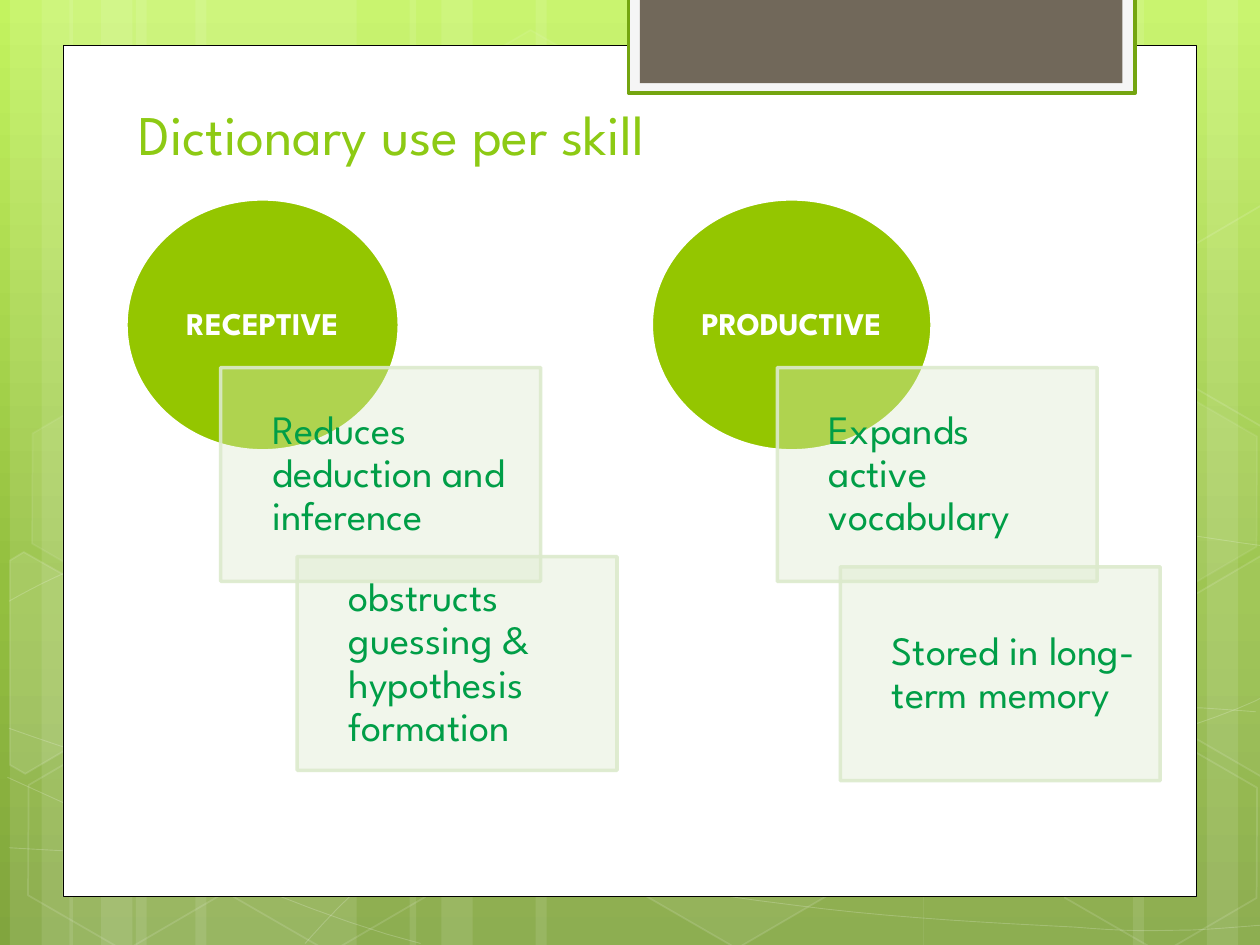
import copy
from dataclasses import dataclass

import pptx
import pptx.dml.color
import pptx.enum.shapes
import pptx.enum.text
import pptx.oxml
import pptx.util
from pptx.util import Cm

SHAPE = pptx.enum.shapes.MSO_SHAPE
ALIGN = pptx.enum.text.PP_ALIGN
ANCHOR = pptx.enum.text.MSO_ANCHOR
WIDTH, HEIGHT = 25.4, 19.05


@dataclass(frozen=True)
class Theme:
    font: str = "League Spartan"
    white: str = "FFFFFF"
    black: str = "000000"
    tab_rim: str = "F5F5F5"
    tab_line: str = "74A510"
    tab: str = "71685A"
    title: str = "8DCA14"
    circle: str = "94C600"
    card: str = "DCEACC"
    card_text: str = "009E47"
    backdrop: tuple = ((0, "C3F35F"), (0.62, "93BF3F"), (1, "81A53E"))
    title_size: int = 32
    circle_size: int = 18
    card_size: int = 23


THEME = Theme()

WAVES = [
    [(0.18, 17.09), (1.55, 17.17), (2.92, 17.25), (4.83, 17.22), (6.73, 17.2),
     (9.09, 17.15), (11.63, 16.89), (14.17, 16.64), (17.78, 16.15), (20.12, 15.67),
     (22.43, 15.19), (24.82, 14.43), (25.58, 13.99)],
    [(0.18, 12.12), (0.91, 11.71), (1.65, 11.33), (3.07, 10.95), (4.52, 10.57),
     (6.58, 10.01), (8.81, 9.83), (11.07, 9.65), (13.82, 9.63), (16.61, 9.83),
     (19.41, 10.03), (24.05, 10.82), (25.58, 11.02)],
    [(0.15, 15.67), (3.23, 17.07), (6.27, 18.47), (8.48, 19.02)],
    [(0.18, 14.68), (0.97, 14.96), (1.78, 15.24), (3.25, 15.65), (4.72, 16.03),
     (6.93, 16.66), (9.07, 17.09), (11.18, 17.53), (13.84, 17.98), (15.95, 18.24),
     (18.06, 18.52), (20.32, 18.62), (21.67, 18.69), (22.99, 18.8), (23.34, 18.75),
     (24, 18.75), (24.66, 18.72), (25.12, 18.67), (25.58, 18.64)],
    [(6.15, 19.02), (6.6, 18.52), (7.06, 18.01), (7.67, 17.55), (8.28, 17.09),
     (9.14, 16.59), (9.86, 16.23), (10.57, 15.88), (11, 15.72), (11.94, 15.47),
     (12.85, 15.21), (14.55, 14.86), (15.44, 14.68), (16.36, 14.5), (16.48, 14.5),
     (17.27, 14.45), (18.06, 14.38), (19.3, 14.3), (20.17, 14.27), (21.06, 14.25),
     (22.5, 14.27), (22.5, 14.27), (23, 14.27), (23.7, 14.27), (24.21, 14.27),
     (24.66, 14.3), (25.1, 14.33), (25.32, 14.35)],
]
HEXAGONS = [
    (8.48, 0.91, 4, 8), (12.62, 14.96, 6, 12), (0.28, 15.01, None, 12),
    (0.36, 7.92, 7, 8), (4.42, 15.04, None, 12), (19.13, 11.51, 10, 12),
    (21.18, 15.06, None, 12), (21.18, 7.98, 7, 8),
]
CUT_HEXAGONS = [
    ([(0.2, 11.3), (0.48, 11.13), (2.44, 12.24), (2.41, 14.48), (0.51, 15.6),
      (0.2, 15.42)], 10),
    ([(23.52, 12.32), (25.43, 11.2), (25.63, 11.33), (25.63, 15.57),
      (25.45, 15.67), (23.52, 14.55)], 4),
    ([(23.52, 5.26), (25.43, 4.14), (25.65, 4.27), (25.63, 8.51),
      (25.45, 8.61), (23.52, 7.49)], None),
]


def color(value):
    return pptx.dml.color.RGBColor.from_string(value)


def set_alpha(shape, where, percent):
    for node in shape._element.spPr.xpath(where + "/a:srgbClr"):
        alpha = pptx.oxml.parse_xml(
            '<a:alpha xmlns:a="http://schemas.openxmlformats.org/drawingml/2006/main"'
            f' val="{percent * 1000}"/>')
        node.append(alpha)


def paint(shape, fill=None, fill_alpha=100, line=None, weight=1, line_alpha=100):
    shape.shadow.inherit = False
    if fill:
        shape.fill.solid()
        shape.fill.fore_color.rgb = color(fill)
        set_alpha(shape, "a:solidFill", fill_alpha)
    else:
        shape.fill.background()
    if line:
        shape.line.color.rgb = color(line)
        shape.line.width = pptx.util.Pt(weight)
        set_alpha(shape, "a:ln/a:solidFill", line_alpha)
    else:
        shape.line.fill.background()


def add_box(page, kind, left, top, width, height, **look):
    shape = page.shapes.add_shape(kind, Cm(left), Cm(top), Cm(width), Cm(height))
    paint(shape, **look)
    return shape


def add_outline(page, points, closed, **look):
    points = [(Cm(x), Cm(y)) for x, y in points]
    builder = page.shapes.build_freeform(*points[0])
    builder.add_line_segments(points[1:], close=closed)
    paint(builder.convert_to_shape(), **look)


def write(shape, text, size, ink, bold=False, align=ALIGN.LEFT,
          anchor=ANCHOR.MIDDLE, spacing=0.9, insets=(0, 0, 0, 0)):
    frame = shape.text_frame
    frame.word_wrap = True
    frame.auto_size = pptx.enum.text.MSO_AUTO_SIZE.NONE
    frame.vertical_anchor = anchor
    (frame.margin_left, frame.margin_top,
     frame.margin_right, frame.margin_bottom) = [Cm(inset) for inset in insets]
    frame.text = text
    para = frame.paragraphs[0]
    para.alignment = align
    para.line_spacing = spacing
    span = para.runs[0]
    span.font.name = THEME.font
    span.font.size = pptx.util.Pt(size)
    span.font.bold = bold
    span.font.color.rgb = color(ink)


def smooth_curve(points, steps=10):
    result = [points[0]]
    for start in range(0, len(points) - 1, 3):
        a, b, c, d = points[start:start + 4]
        for step in range(1, steps + 1):
            t = step / steps
            u = 1 - t
            result.append(tuple(
                u ** 3 * a[axis] + 3 * u * u * t * b[axis]
                + 3 * u * t * t * c[axis] + t ** 3 * d[axis] for axis in (0, 1)))
    return result


def add_backdrop(page):
    fill = page.background.fill
    fill.gradient()
    fill.gradient_angle = 270
    last = fill.gradient_stops[1]._gs
    last.addprevious(copy.deepcopy(last))
    for stop, (position, value) in zip(fill.gradient_stops, THEME.backdrop):
        stop.position = position
        stop.color.rgb = color(value)


def add_stripes(page):
    for base, direction, wide in [(0.2, 1, 4.45), (1.4, 1, 4.45),
                                  (25.6, -1, 4.45), (8.26, 1, 7.82)]:
        for offset, width in [(2.54, wide), (0, 1.27), (0.64, 2.12)]:
            left = base + offset if direction > 0 else base - offset - width
            add_box(page, SHAPE.RECTANGLE, left, 0, width, HEIGHT,
                    fill=THEME.white, fill_alpha=10)


def add_lattice(page):
    for wave in WAVES:
        add_outline(page, smooth_curve(wave), False,
                    line=THEME.white, weight=0.5, line_alpha=20)
    for left, top, fill_alpha, line_alpha in HEXAGONS:
        hexagon = add_box(page, SHAPE.HEXAGON, left, top, 4.45, 3.86,
                          fill=fill_alpha and THEME.white, fill_alpha=fill_alpha,
                          line=THEME.white, line_alpha=line_alpha)
        hexagon.adjustments[0] = 0.285
        hexagon.rotation = 30
    for points, fill_alpha in CUT_HEXAGONS:
        add_outline(page, points, True, fill=fill_alpha and THEME.white,
                    fill_alpha=fill_alpha, line=THEME.white, line_alpha=12)


def add_panel(page, left, top, width, height):
    add_box(page, SHAPE.RECTANGLE, left, top, width, height,
            fill=THEME.white, line=THEME.black, weight=0.5)
    add_box(page, SHAPE.RECTANGLE, left + 11.4, top - 0.96, 10.21, 1.93,
            fill=THEME.tab_rim, line=THEME.tab_line, weight=2)
    add_box(page, SHAPE.RECTANGLE, left + 11.63, top - 0.96, 9.73, 1.73,
            fill=THEME.tab)


def add_title(page, left, top, width, height):
    title = page.shapes.title
    title.left, title.top, title.width, title.height = map(Cm, (left, top, width, height))
    write(title, "Dictionary use per skill", THEME.title_size, THEME.title,
          anchor=ANCHOR.BOTTOM, spacing=1, insets=(0.25, 0.13, 0.25, 0.13))
    page.shapes._spTree.append(title._element)


def add_skill(page, left, top, diameter, name, cards):
    circle = add_box(page, SHAPE.OVAL, left, top, diameter, 5.08,
                     fill=THEME.circle, line=THEME.white, weight=2)
    write(circle, name, THEME.circle_size, THEME.white, bold=True, align=ALIGN.CENTER)
    for across, down, text in cards:
        card = add_box(page, SHAPE.RECTANGLE, left + across, top + down, 6.45, 4.31,
                       fill=THEME.card, fill_alpha=39,
                       line=THEME.card, weight=2, line_alpha=90)
        write(card, text, THEME.card_size, THEME.card_text,
              insets=(1.04, 0.46, 0.46, 0.46))


def main():
    deck = pptx.Presentation()
    deck.slide_width, deck.slide_height = Cm(WIDTH), Cm(HEIGHT)
    page = deck.slides.add_slide(deck.slide_layouts[5])
    add_backdrop(page)
    add_stripes(page)
    add_lattice(page)
    add_panel(page, 1.27, 0.91, 22.86, 17.17)
    add_title(page, 2.54, 1.7, 19.51, 1.8)
    add_skill(page, 2.54, 4.01, 5.51, "RECEPTIVE", [
        (1.91, 3.4, "Reduces deduction and inference"),
        (3.45, 7.21, "obstructs guessing & hypothesis formation")])
    add_skill(page, 13.13, 4.01, 5.66, "PRODUCTIVE", [
        (2.54, 3.4, "Expands active vocabulary"),
        (3.81, 7.42, "Stored in long-term memory")])
    deck.save("out.pptx")


if __name__ == "__main__":
    main()
